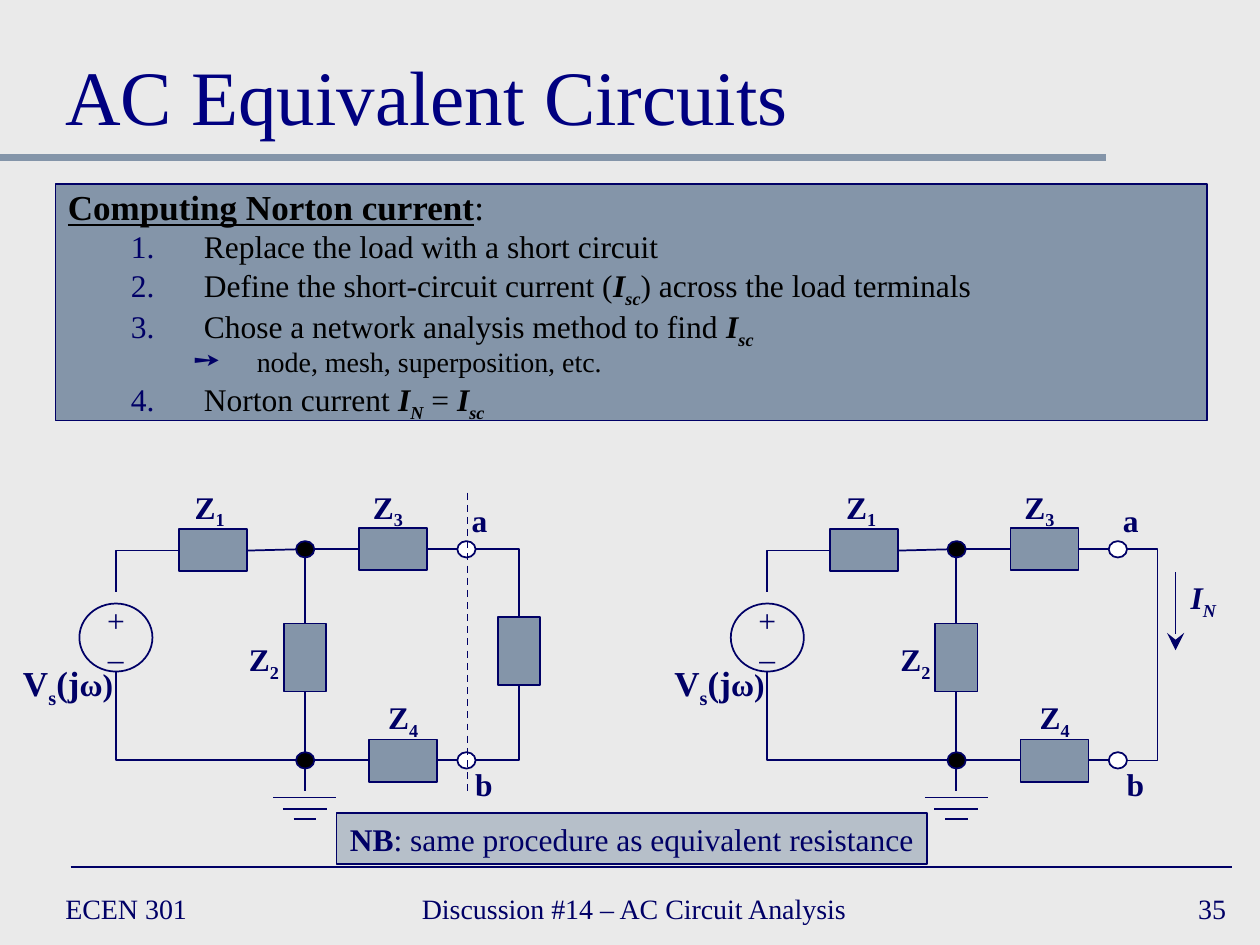
from dataclasses import dataclass, replace
from typing import Any

import lxml.etree
import pptx
import pptx.dml.color
import pptx.enum.dml
import pptx.enum.shapes
import pptx.enum.text
import pptx.oxml.ns
import pptx.util

COLORS = {"paper": "EAEAEA", "slate": "8495A9", "navy": "000066",
          "title": "000080", "black": "000000", "white": "FFFFFF"}
FONT = "Times New Roman"
COLUMNS, ROWS = 100, 75
CELL = pptx.util.Inches(10) // COLUMNS
SHAPE = pptx.enum.shapes.MSO_SHAPE
CONNECTOR = pptx.enum.shapes.MSO_CONNECTOR
ALIGN = pptx.enum.text.PP_ALIGN
ANCHOR = pptx.enum.text.MSO_ANCHOR
qn = pptx.oxml.ns.qn


@dataclass(frozen=True)
class Span:
    text: str
    size: float = 18
    bold: bool = False
    italic: bool = False
    sub: bool = False
    underline: bool = False
    color: str = "navy"


@dataclass(frozen=True)
class Step:
    spans: list[Span]
    level: int = 1


@dataclass(frozen=True)
class Label:
    left: float
    top: float
    width: float
    height: float
    spans: list[Span]


def cells(*lengths: float) -> list[int]:
    return [round(length * CELL) for length in lengths]


def rgb(name: str) -> pptx.dml.color.RGBColor:
    return pptx.dml.color.RGBColor.from_string(COLORS[name])


def child(parent: Any, tag: str, **attributes: str) -> Any:
    return lxml.etree.SubElement(parent, qn(tag), **attributes)


def write(para: Any, spans: list[Span], align: Any = ALIGN.LEFT) -> None:
    para.alignment = align
    for span in spans:
        run = para.add_run()
        run.text = span.text
        font = run.font
        font.name, font.size = FONT, pptx.util.Pt(span.size)
        font.bold, font.italic, font.underline = span.bold, span.italic, span.underline
        font.color.rgb = rgb(span.color)
        if span.sub:
            run._r.get_or_add_rPr().set("baseline", "-25000")


def add_text(shapes: Any, place: tuple, lines: list[list[Span]], align: Any = ALIGN.CENTER,
             anchor: Any = ANCHOR.TOP, top_margin: float = 0.7) -> None:
    frame = shapes.add_textbox(*cells(*place)).text_frame
    frame.word_wrap = False
    frame.vertical_anchor = anchor
    frame.margin_top = cells(top_margin)[0]
    for index, spans in enumerate(lines):
        write(frame.add_paragraph() if index else frame.paragraphs[0], spans, align)


def add_block(shapes: Any, kind: Any, place: tuple, fill: str | None,
              turn: int = 0, width: float = 1) -> Any:
    block = shapes.add_shape(kind, *cells(*place))
    block.shadow.inherit = False
    block.rotation = turn
    if fill:
        block.fill.solid()
        block.fill.fore_color.rgb = rgb(fill)
    else:
        block.fill.background()
    block.line.color.rgb = rgb("navy")
    block.line.width = pptx.util.Pt(width)
    return block


def add_wire(shapes: Any, start: tuple, end: tuple, color: str = "navy",
             width: float = 1, kind: Any = CONNECTOR.STRAIGHT) -> Any:
    wire = shapes.add_connector(kind, *cells(*start, *end))
    wire.line.color.rgb = rgb(color)
    wire.line.width = pptx.util.Pt(width)
    child(wire._element.spPr, "a:effectLst")
    return wire


def add_corner(shapes: Any, start: tuple, end: tuple) -> None:
    wire = add_wire(shapes, start, end, kind=CONNECTOR.ELBOW)
    wire._element.spPr.find(qn("a:prstGeom")).set("prst", "bentConnector2")


def add_loop(shapes: Any, start: tuple, end: tuple, reach: float) -> None:
    wire = add_wire(shapes, start, end, kind=CONNECTOR.ELBOW)
    adjust = wire._element.spPr.find(qn("a:prstGeom")).get_or_add_avLst()
    share = round(reach / (end[0] - start[0]) * 100000)
    child(adjust, "a:gd", name="adj1", fmla=f"val {share}")


def symbol(base: str, index: str, italic: bool = False, size: float = 18,
           color: str = "navy") -> list[Span]:
    main = Span(base, size, bold=True, italic=italic, color=color)
    return [main, replace(main, text=index, sub=True)]


def add_circuit(page: Any, x: float, shorted: bool) -> None:
    shapes = page.shapes.add_group_shape().shapes
    top, bottom, source, middle, load = 43.6, 60.35, x + 9.2, x + 24.2, x + 41.2
    wires = [((middle, 44.3), (middle, 49.5)), ((middle, 54.8), (middle, 59.7)),
             ((x + 19.6, 43.7), (x + 23.5, top)), ((x + 24.9, top), (x + 28.5, top)),
             ((x + 33.9, top), (x + 36.3, top)), ((x + 24.9, bottom), (x + 29.3, bottom)),
             ((x + 34.7, bottom), (x + 36.3, bottom)), ((middle, bottom), (middle, 62.8))]
    wires += [((middle - half, row), (middle + half, row))
              for half, row in ((2.5, 63.3), (1.75, 64.2), (0.9, 65))]
    for start, end in wires:
        add_wire(shapes, start, end)
    add_corner(shapes, (x + 23.5, bottom), (source, 53.3))
    add_corner(shapes, (x + 14.2, 43.7), (source, 47))

    for left, fill in ((x + 23.5, "black"), (x + 36.3, "white")):
        for row in (top, bottom):
            add_block(shapes, SHAPE.OVAL, (left, row - 0.65, 1.45, 1.3), fill)
    add_block(shapes, SHAPE.OVAL, (source - 2.9, 47.9, 5.8, 5.4), None)

    impedances = [(x + 14.2, 42, 0), (x + 28.5, 41.9, 0),
                  (x + 21.5, 50.5, 270), (x + 29.3, 58.7, 0)]
    if not shorted:
        impedances.append((x + 38.5, 50, 270))
    for left, row, turn in impedances:
        add_block(shapes, SHAPE.RECTANGLE, (left, row, 5.4, 3.35), "slate", turn)

    labels = [Label(14.1, 38, 5.1, 4, symbol("Z", "1")),
              Label(27.3, 38, 7, 4, symbol("Z", "3")),
              Label(18.7, 50.1, 4.5, 4, symbol("Z", "2")),
              Label(28.5, 54.7, 7, 4, symbol("Z", "4")),
              Label(36.4, 39.1, 3.3, 4, [Span("a", bold=True)]),
              Label(36.7, 60, 3.4, 4, [Span("b", bold=True)]),
              Label(0.8, 51.8, 9.2, 4.3, symbol("V", "s", size=20)
                    + [Span("(j", 20, bold=True), Span("ω)", bold=True)])]
    if shorted:
        labels.append(Label(41.7, 45.2, 4.2, 4, symbol("I", "N", italic=True)))
    for label in labels:
        add_text(shapes, (x + label.left, label.top, label.width, label.height), [label.spans])
    add_text(shapes, (source - 1.7, 47, 3.4, 7), [[Span("+")], [Span("–")]])

    if shorted:
        add_loop(shapes, (x + 37.65, top), (x + 37.75, bottom), 2.55)
        arrow = add_wire(shapes, (x + 41.6, 45.4), (x + 41.6, 51.6))
        child(arrow.line._get_or_add_ln(), "a:tailEnd", type="stealth", w="lg", len="lg")
    else:
        add_corner(shapes, (x + 37.75, top), (load, 49))
        add_corner(shapes, (x + 37.75, bottom), (load, 54.3))
        cut = add_wire(shapes, (x + 37.1, 39.1), (x + 37.1, 62.8))
        cut.line.dash_style = pptx.enum.dml.MSO_LINE.DASH


def add_step(frame: Any, step: Step) -> None:
    para = frame.add_paragraph()
    para.level = step.level
    para.line_spacing = 0.8
    properties = para._p.get_or_add_pPr()
    margin, indent = {1: (10.8, -5.8), 2: (15, -5)}[step.level]
    properties.set("marL", str(cells(margin)[0]))
    properties.set("indent", str(cells(indent)[0]))
    child(child(properties, "a:spcBef"), "a:spcPct", val="20000")
    child(child(properties, "a:buClr"), "a:srgbClr", val=COLORS["navy"])
    child(properties, "a:buFont", typeface=FONT)
    if step.level == 1:
        child(properties, "a:buAutoNum", type="arabicPeriod")
    else:
        child(properties, "a:buChar", char="➙")
    write(para, step.spans)


def add_procedure(page: Any) -> None:
    panel = add_block(page.shapes, SHAPE.RECTANGLE, (4.4, 14.6, 91.4, 18.8), "slate", width=0.75)
    frame = panel.text_frame
    frame.word_wrap = True
    frame.vertical_anchor = ANCHOR.TOP
    frame.margin_top = cells(0.8)[0]
    frame.paragraphs[0].line_spacing = 0.8
    write(frame.paragraphs[0], [
        Span("Computing Norton current", 20, bold=True, underline=True, color="black"),
        Span(":", 20, color="black")])
    plain = Span("", color="black")
    short = symbol("I", "sc", italic=True, color="black")
    norton = symbol("I", "N", italic=True, color="black")
    steps = [
        Step([replace(plain, text="Replace the load with a short circuit")]),
        Step([replace(plain, text="Define the short-circuit current ("), *short,
              replace(plain, text=") across the load terminals")]),
        Step([replace(plain, text="Chose a network analysis method to find "), *short]),
        Step([replace(plain, text="node, mesh, superposition, etc.", size=16)], level=2),
        Step([replace(plain, text="Norton current "), *norton,
              replace(plain, text=" = "), *short])]
    for step in steps:
        add_step(frame, step)


def add_note(page: Any) -> None:
    note = add_block(page.shapes, SHAPE.RECTANGLE, (26.7, 64.5, 46.9, 4.1), "slate")
    color = note._element.spPr.find(qn("a:solidFill"))[0]
    child(color, "a:alpha", val="50000")
    note.text_frame.word_wrap = False
    write(note.text_frame.paragraphs[0], [
        Span("NB", bold=True), Span(": same procedure as equivalent resistance")], ALIGN.CENTER)


def main() -> None:
    deck = pptx.Presentation()
    deck.slide_width, deck.slide_height = cells(COLUMNS, ROWS)
    page = deck.slides.add_slide(deck.slide_layouts[6])
    page.background.fill.solid()
    page.background.fill.fore_color.rgb = rgb("paper")
    add_wire(page.shapes, (0, 12.5), (87.8, 12.5), "slate", 4)
    add_wire(page.shapes, (5.6, 68.8), (97.8, 68.8))
    for left, width, text, align in (
            (4.2, 21.7, "ECEN 301", ALIGN.LEFT),
            (32.5, 38.3, "Discussion #14 – AC Circuit Analysis", ALIGN.LEFT),
            (77.5, 20.8, "35", ALIGN.RIGHT)):
        add_text(page.shapes, (left, 70, width, 4.2), [[Span(text, 16)]],
                 align, ANCHOR.MIDDLE, 0.5)
    add_text(page.shapes, (4.2, 1.7, 91.7, 10), [[Span("AC Equivalent Circuits", 44, color="title")]],
             ALIGN.LEFT, ANCHOR.BOTTOM, 0.5)
    add_procedure(page)
    for x, shorted in ((0, False), (51.7, True)):
        add_circuit(page, x, shorted)
    add_note(page)
    deck.save("out.pptx")


if __name__ == "__main__":
    main()
